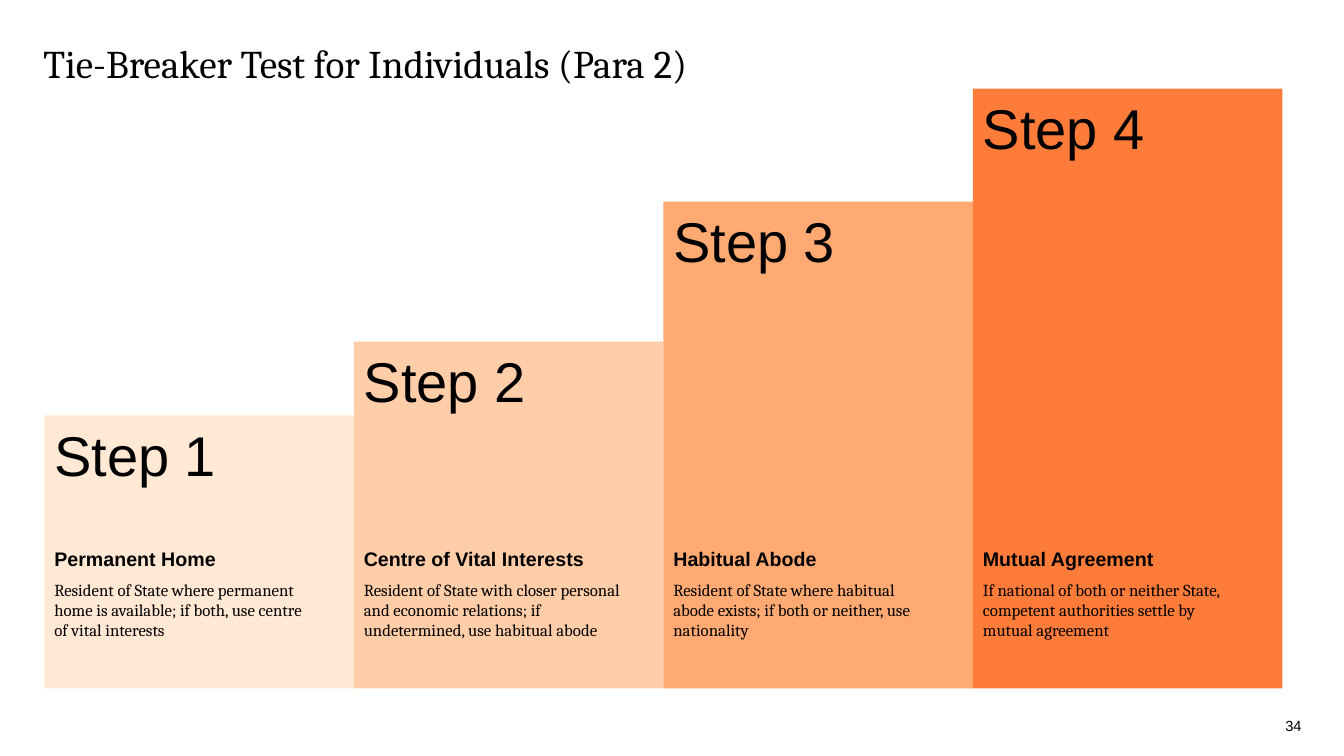
from pptx import Presentation
from pptx.dml.color import RGBColor
from pptx.enum.shapes import MSO_SHAPE
from pptx.enum.text import MSO_ANCHOR, PP_ALIGN
from pptx.util import Pt

PX = 9144  # 100 px to the inch
BLACK = RGBColor(0x00, 0x00, 0x00)
CREAM = RGBColor(0xFF, 0xE8, 0xD4)
PEACH = RGBColor(0xFF, 0xCD, 0xA8)
APRICOT = RGBColor(0xFF, 0xAA, 0x72)
ORANGE = RGBColor(0xFE, 0x7C, 0x39)

TITLE = {"name": "Cambria", "size": Pt(28)}
STEP = {"name": "Arial", "size": Pt(40)}
HEADING = {"name": "Arial", "size": Pt(14), "bold": True}
BODY = {"name": "Cambria", "size": Pt(12)}
NUMBER = {"name": "Arial", "size": Pt(10.5)}

STAIR_LEFT, STAIR_WIDTH, STAIR_BOTTOM = 44, 307, 683
TEXT_WIDTH, LABEL_HEIGHT = 272, 155
DETAIL_TOP, DETAIL_HEIGHT = 543, 140

STEPS = [
    (412, CREAM, "Permanent Home",
     "Resident of State where permanent home is available; if both, use centre of vital interests"),
    (339, PEACH, "Centre of Vital Interests",
     "Resident of State with closer personal and economic relations; if undetermined, use habitual abode"),
    (200, APRICOT, "Habitual Abode",
     "Resident of State where habitual abode exists; if both or neither, use nationality"),
    (88, ORANGE, "Mutual Agreement",
     "If national of both or neither State, competent authorities settle by mutual agreement"),
]


def add_text(box, insets, lines):
    """Add a text box of (text, font format) lines; box and insets are in px."""
    shape = slide.shapes.add_textbox(*(value * PX for value in box))
    frame = shape.text_frame
    frame.word_wrap = True
    for side, inset in zip(("left", "top", "right", "bottom"), insets):
        setattr(frame, f"margin_{side}", inset * PX)
    for index, (text, font_format) in enumerate(lines):
        paragraph = frame.add_paragraph() if index else frame.paragraphs[0]
        if index:
            paragraph.space_before = Pt(6)
        run = paragraph.add_run()
        run.text = text
        run.font.color.rgb = BLACK
        for name, value in font_format.items():
            setattr(run.font, name, value)
    return frame


presentation = Presentation()
presentation.slide_width = 1333 * PX
presentation.slide_height = 750 * PX
slide = presentation.slides.add_slide(presentation.slide_layouts[6])

title = add_text((43, 44, 862, 100), (0, 0, 0, 0),
                 [("Tie-Breaker Test for Individuals (Para 2)", TITLE)])
title.paragraphs[0].line_spacing = 0.9

for index, (top, color, heading, body) in enumerate(STEPS):
    left = STAIR_LEFT + index * STAIR_WIDTH
    stair = slide.shapes.add_shape(
        MSO_SHAPE.RECTANGLE, left * PX, top * PX,
        STAIR_WIDTH * PX, (STAIR_BOTTOM - top) * PX)
    stair.shadow.inherit = False
    stair.fill.solid()
    stair.fill.fore_color.rgb = color
    stair.line.fill.background()
    add_text((left, top, TEXT_WIDTH, LABEL_HEIGHT), (10, 5, 10, 5),
             [(f"Step {index + 1}", STEP)])
    add_text((left, DETAIL_TOP, TEXT_WIDTH, DETAIL_HEIGHT), (10, 0, 0, 0),
             [(heading, HEADING), (body, BODY)])

number = add_text((1258, 711, 33, 18), (0, 0, 0, 0), [("34", NUMBER)])
number.vertical_anchor = MSO_ANCHOR.BOTTOM
number.paragraphs[0].alignment = PP_ALIGN.RIGHT

presentation.save("out.pptx")
